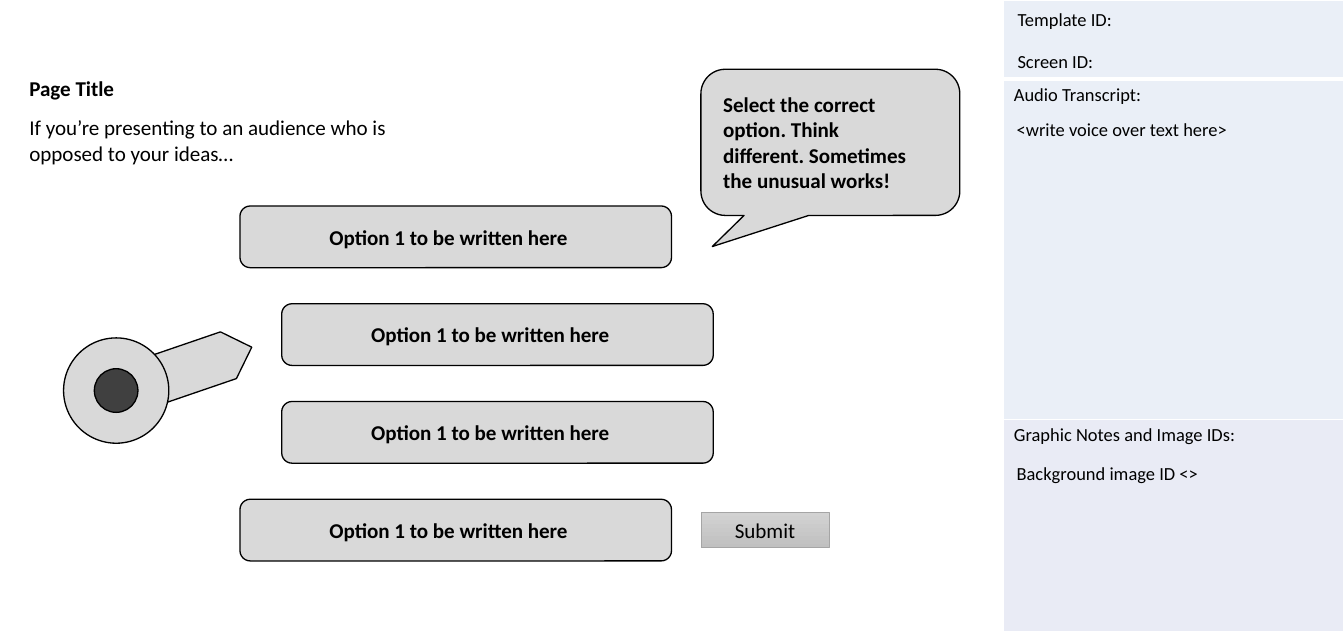
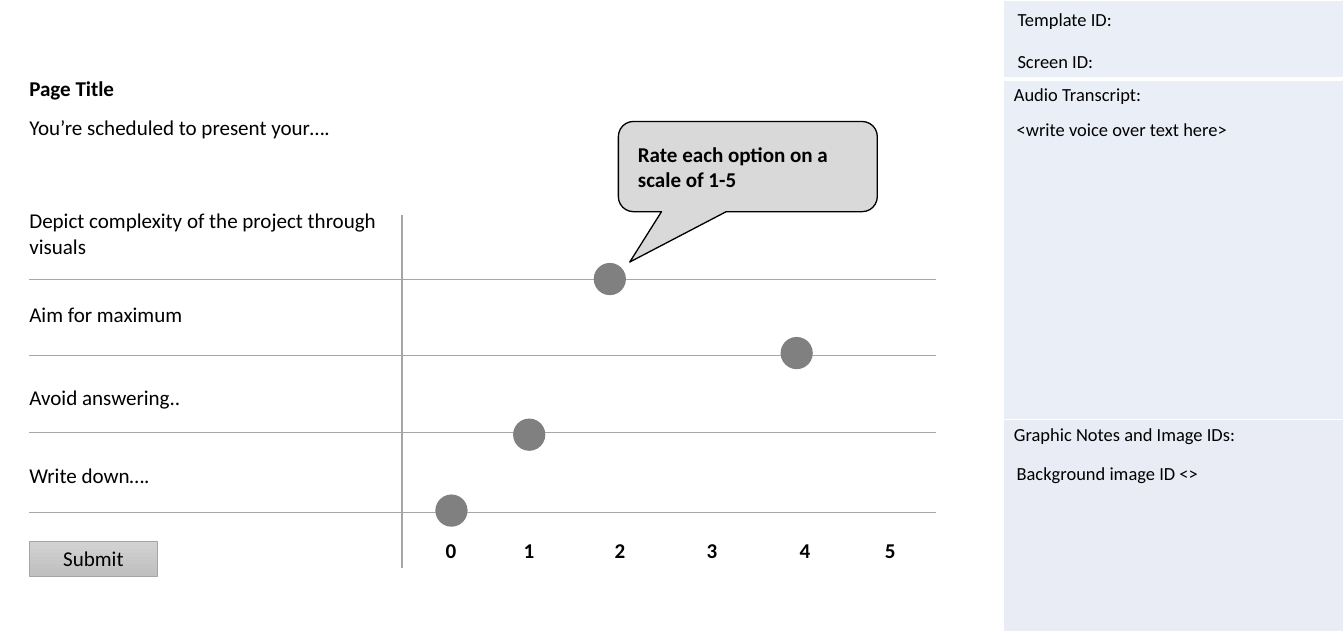
from lxml.etree import SubElement
from pptx import Presentation
from pptx.dml.color import RGBColor
from pptx.enum.shapes import MSO_CONNECTOR, MSO_SHAPE as SHAPE
from pptx.enum.text import MSO_ANCHOR as ANCHOR, PP_ALIGN as ALIGN
from pptx.oxml.ns import qn
from pptx.util import Inches, Pt

FONT = "Calibri"
BLACK, WHITE, GREY, HUB, DOT = "000000", "FFFFFF", "D9D9D9", "404040", "808080"
RULE, BUTTON_LINE, BUTTON_TOP, BUTTON_END = "A6A6A6", "A5A5A5", "D2D2D2", "C0C0C0"
PANEL, PANEL_ALT = "EAEFF7", "E9EBF5"
BODY = {"size": Pt(16), "name": FONT, "bold": False}
BOLD = {**BODY, "bold": True}
NOTE = {**BODY, "size": Pt(14)}
NO_INSET = (0, 0, 0, 0)
BOX_INSET = (0.1, 0.05, 0.1, 0.05)
CARD_INSET = (0.16, 0.16, 0.31, 0.16)
BUTTON_INSET = (0, 0.05, 0, 0.05)
CELL_INSET = (0.11, 0.05, 0.11, 0.05)
SIDES = ("left", "top", "right", "bottom")


def rgb(value):
    """Turn a hex string into a colour."""
    return RGBColor.from_string(value)


def inches(*values):
    """Turn numbers into lengths."""
    return [Inches(v) for v in values]


def write(tf, text, fmt, align=ALIGN.LEFT):
    """Write one formatted paragraph into a text frame."""
    p = tf.paragraphs[0]
    p.alignment = align
    r = p.add_run()
    r.text = text
    for key, value in fmt.items():
        setattr(r.font, key, value)
    r.font.color.rgb = rgb(BLACK)


def fill_frame(tf, text, fmt, inset, align=ALIGN.LEFT, anchor=ANCHOR.TOP):
    """Set the insets of a text frame and write its text."""
    tf.word_wrap = True
    tf.vertical_anchor = anchor
    for side, value in zip(SIDES, inset):
        setattr(tf, f"margin_{side}", Inches(value))
    write(tf, text, fmt, align)


def add_text(s, box, text, fmt=BODY, inset=NO_INSET):
    """Add a text box."""
    fill_frame(s.shapes.add_textbox(*inches(*box)).text_frame, text, fmt, inset)


def add_block(shapes, kind, box, fill=GREY, line=BLACK, width=1):
    """Add a flat preset shape, without outline if line is None."""
    sp = shapes.add_shape(kind, *inches(*box))
    sp.shadow.inherit = False
    sp.fill.solid()
    sp.fill.fore_color.rgb = rgb(fill)
    if line is None:
        sp.line.fill.background()
    else:
        sp.line.color.rgb = rgb(line)
        sp.line.width = Pt(width)
    return sp


def add_rule(s, x1, y1, x2, y2, width):
    """Add a thin grey straight line."""
    line = s.shapes.add_connector(MSO_CONNECTOR.STRAIGHT, *inches(x1, y1, x2, y2))
    line.line.color.rgb = rgb(RULE)
    line.line.width = Pt(width)
    SubElement(line._element.spPr, qn("a:effectLst"))


def add_card(s, box, text):
    """Add a rounded option card."""
    sp = add_block(s.shapes, SHAPE.ROUNDED_RECTANGLE, box)
    fill_frame(sp.text_frame, text, BOLD, CARD_INSET, ALIGN.CENTER)


def add_callout(s, box, text, tip):
    """Add a speech bubble whose tail reaches down by the ratio tip."""
    sp = add_block(s.shapes, SHAPE.ROUNDED_RECTANGULAR_CALLOUT, box)
    for i, value in enumerate((-0.456, tip, 0.167)):
        sp.adjustments[i] = value
    fill_frame(sp.text_frame, text, BOLD, CARD_INSET)


def add_submit(s, left, top):
    """Add the shaded submit button."""
    sp = add_block(s.shapes, SHAPE.RECTANGLE, (left, top, 1.35, 0.37),
                   line=BUTTON_LINE, width=0.5)
    sp.fill.gradient()
    sp.fill.gradient_angle = 270
    for stop, color in zip(sp.fill.gradient_stops, (BUTTON_TOP, BUTTON_END)):
        stop.color.rgb = rgb(color)
    fill_frame(sp.text_frame, "Submit", BODY, BUTTON_INSET, ALIGN.CENTER, ANCHOR.MIDDLE)


def add_borders(cell, bottom):
    """Give a cell white borders, with its own bottom width."""
    tc_pr = cell._tc.get_or_add_tcPr()
    for tag, width in (("lnL", 1), ("lnR", 1), ("lnT", 1), ("lnB", bottom)):
        ln = SubElement(tc_pr, qn(f"a:{tag}"), w=str(Pt(width)))
        SubElement(SubElement(ln, qn("a:solidFill")), qn("a:srgbClr"), val=WHITE)


def add_sidebar(s, left, top, width):
    """Add the production notes panel with its labels."""
    rows = [(0.83, "", PANEL, 3),
            (3.59, "Audio Transcript:", PANEL, 1),
            (2.23, "Graphic Notes and Image IDs:", PANEL_ALT, 1)]
    height = sum(row[0] for row in rows)
    table = s.shapes.add_table(len(rows), 1, *inches(left, top, width, height)).table
    table.first_row = table.horz_banding = False
    for i, (row_height, text, fill, bottom) in enumerate(rows):
        table.rows[i].height = Inches(row_height)
        cell = table.cell(i, 0)
        add_borders(cell, bottom)
        cell.fill.solid()
        cell.fill.fore_color.rgb = rgb(fill)
        for side, value in zip(SIDES, CELL_INSET):
            setattr(cell, f"margin_{side}", Inches(value))
        if text:
            write(cell.text_frame, text, NOTE)
    for dx, dy, text in [(0.05, 0.48, "Screen ID:"),
                         (0.05, 0.04, "Template ID:"),
                         (0.04, 1.19, "<write voice over text here>"),
                         (0.04, 4.82, "Background image ID <>")]:
        add_text(s, (left + dx, top + dy, width - dx, 0.34), text, NOTE, BOX_INSET)


def add_heading(s, left, top, intro):
    """Add the page title and the introduction below it."""
    add_text(s, (left, top, 1.54, 0.38), "Page Title", BOLD)
    add_text(s, (left, top + 0.42, 4.17, 0.38), intro)


def add_dial(s, left, top):
    """Add the round dial with its tilted pointer."""
    pointer = add_block(s.shapes, SHAPE.PENTAGON, (left + 0.71, top + 0.05, 1.31, 0.52))
    pointer.rotation = 341.1
    dial = s.shapes.add_group_shape()
    for size, fill in ((1.11, GREY), (0.46, HUB)):
        offset = (1.11 - size) / 2
        add_block(dial.shapes, SHAPE.OVAL, (left + offset, top + offset, size, size), fill)


def add_options(s, left, top):
    """Add the four option cards, the middle two indented."""
    for i, indent in enumerate((0, 0.44, 0.44, 0)):
        add_card(s, (left + indent, top + i * 1.03, 4.55, 0.65), "Option 1 to be written here")


def add_scale_grid(s, left, top):
    """Add the row labels, row lines, axis and axis numbers."""
    rows = [(0, 0.75, "Depict complexity of the project through visuals"),
            (0.99, 1.55, "Aim for maximum"),
            (1.86, 2.37, "Avoid answering.."),
            (2.68, 3.21, "Write down….")]
    for label_y, line_y, text in rows:
        add_text(s, (left, top + label_y, 3.9, 0.4), text)
        add_rule(s, left, top + line_y, left + 9.56, top + line_y, 0.5)
    add_rule(s, left + 3.93, top + 0.08, left + 3.93, top + 3.79, 1)
    for number, dx in enumerate((4.39, 5.21, 6.17, 7.14, 8.12, 9.02)):
        add_text(s, (left + dx, top + 3.47, 0.74, 0.38), str(number), BOLD)


def add_markers(s, left, top):
    """Add the rating dots."""
    for dx, dy in ((5.95, 0.58), (7.92, 1.36), (5.1, 2.22), (4.28, 3.02)):
        add_block(s.shapes, SHAPE.OVAL, (left + dx, top + dy, 0.34, 0.34), DOT, None)


def add_page(prs, intro):
    """Add a blank slide with the shared sidebar and heading."""
    s = prs.slides.add_slide(prs.slide_layouts[6])
    add_sidebar(s, 10.58, 0, 3.59)
    add_heading(s, 0.31, 0.79, intro)
    return s


def build_choice(prs):
    """Build the slide where one option is selected."""
    s = add_page(prs, "If you’re presenting to an audience who is opposed to your ideas…")
    add_callout(s, (7.39, 0.73, 2.73, 1.54),
                "Select the correct option. Think different. "
                "Sometimes the unusual works!", 0.713)
    add_options(s, 2.53, 2.17)
    add_dial(s, 0.67, 3.56)
    add_submit(s, 7.39, 5.4)


def build_rating(prs):
    """Build the slide where each option is rated."""
    s = add_page(prs, "You’re scheduled to present your….")
    add_scale_grid(s, 0.31, 2.19)
    add_callout(s, (6.52, 1.28, 2.73, 0.95), "Rate each option on a scale of 1-5", 1.059)
    add_markers(s, 0.31, 2.19)
    add_submit(s, 0.31, 5.7)


def main():
    """Build and save the presentation."""
    prs = Presentation()
    prs.slide_width, prs.slide_height = inches(14.17, 6.69)
    build_choice(prs)
    build_rating(prs)
    prs.save("out.pptx")


if __name__ == "__main__":
    main()
